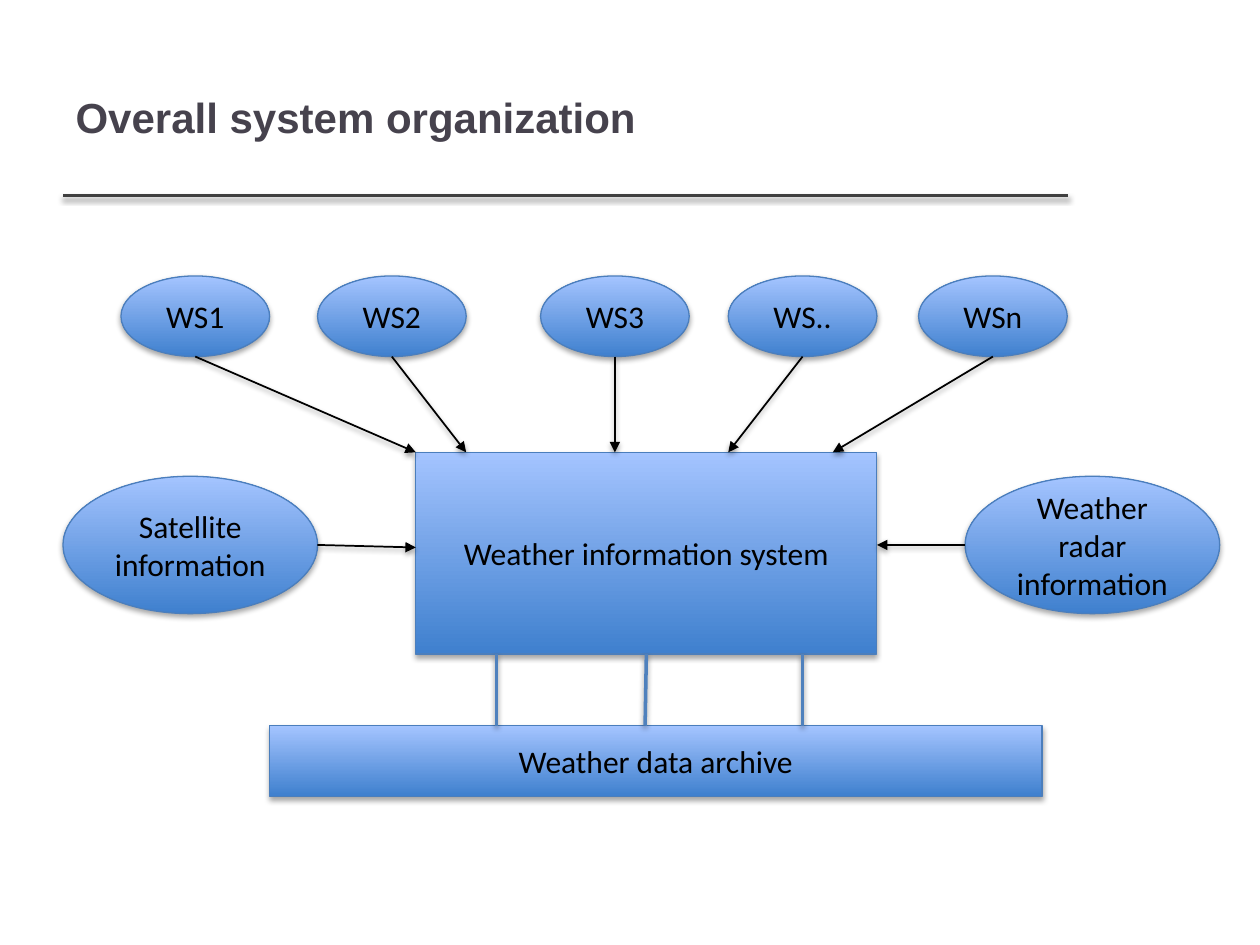
from lxml import etree
from pptx import Presentation
from pptx import util as u
from pptx.dml import color
from pptx.enum import shapes, text
from pptx.oxml import ns


def rgb(value):
    """Return a colour from a hex string."""
    return color.RGBColor.from_string(value)


def add_shadow(sp, distance, alpha):
    """Give a shape or connector a soft shadow that falls downwards."""
    effects = etree.SubElement(sp._element.spPr, ns.qn("a:effectLst"))
    shadow = etree.SubElement(effects, ns.qn("a:outerShdw"), blurRad="40000",
                              dist=str(distance), dir="5400000", rotWithShape="0")
    black = etree.SubElement(shadow, ns.qn("a:srgbClr"), val="000000")
    etree.SubElement(black, ns.qn("a:alpha"), val=str(alpha * 1000))


def write(tf, content, font="Calibri", size=18, fill="000000", bold=False,
          align=text.PP_ALIGN.CENTER):
    """Write one formatted paragraph, centred vertically, in a text frame."""
    tf.word_wrap = True
    tf.vertical_anchor = text.MSO_ANCHOR.MIDDLE
    p = tf.paragraphs[0]
    p.alignment = align
    r = p.add_run()
    r.text = content
    r.font.name, r.font.size, r.font.bold = font, u.Pt(size), bold
    r.font.color.rgb = rgb(fill)


def add_node(s, kind, box, label):
    """Add a labelled blue gradient shape in the given box."""
    sp = s.shapes.add_shape(kind, *map(u.Inches, box))
    sp.fill.gradient()
    sp.fill.gradient_angle = 90
    for stop, value in zip(sp.fill.gradient_stops, ("3F80CE", "A4C4FF")):
        stop.color.rgb = rgb(value)
    sp.line.color.rgb = rgb("4B7EBC")
    sp.line.width = u.Pt(0.75)
    add_shadow(sp, 23000, 35)
    write(sp.text_frame, label)
    return sp


def add_line(s, start, end, fill="000000", width=1, arrow=False):
    """Add a straight line between two points, with an optional arrowhead."""
    line = s.shapes.add_connector(shapes.MSO_CONNECTOR.STRAIGHT,
                                  *map(u.Inches, (*start, *end)))
    line.line.color.rgb = rgb(fill)
    line.line.width = u.Pt(width)
    if arrow:
        etree.SubElement(line.line._get_or_add_ln(), ns.qn("a:tailEnd"), type="triangle")
    add_shadow(line, 20000, 38)
    return line


def add_title(s, box, title):
    """Place the title and the rule along its lower edge."""
    left, top, width, height = box
    add_line(s, (left, top + height), (left + width, top + height), "404040", 2)
    sp = s.shapes.title
    sp.left, sp.top, sp.width, sp.height = map(u.Inches, box)
    write(sp.text_frame, title, font="Arial", size=24, fill="46424D", bold=True,
          align=text.PP_ALIGN.LEFT)


def add_stations(s, box, system_box):
    """Add the row of weather stations with arrows to the top of the system."""
    left, top, _, height = box
    system_left, system_top = system_box[:2]
    width = 1.18
    stations = [("WS1", 0, 0), ("WS2", 1.56, 0.4), ("WS3", 3.33, 1.58),
                ("WS..", 4.82, 2.48), ("WSn", 6.33, 3.31)]
    for label, offset, target in stations:
        x = left + offset
        add_node(s, shapes.MSO_SHAPE.OVAL, (x, top, width, height), label)
        add_line(s, (x + width / 2, top + height), (system_left + target, system_top),
                 arrow=True)


def add_sources(s, box, system_box):
    """Add the remote sources at both ends of the box, pointing at the system."""
    left, top, width, height = box
    system_left, _, system_width, _ = system_box
    oval_width, y = 2.02, top + height / 2
    right = left + width - oval_width
    for x, label in ((left, "Satellite information"), (right, "Weather radar information")):
        add_node(s, shapes.MSO_SHAPE.OVAL, (x, top, oval_width, height), label)
    add_line(s, (left + oval_width, y), (system_left, y + 0.02), arrow=True)
    add_line(s, (right, y), (system_left + system_width, y), arrow=True)


def add_archive(s, box, system, system_box):
    """Add the archive and the three links from the system down to it."""
    left, top, _, _ = box
    _, system_top, _, system_height = system_box
    add_node(s, shapes.MSO_SHAPE.RECTANGLE, box, "Weather data archive")
    bottom = system_top + system_height
    links = [add_line(s, (left + offset, bottom), (left + offset, top), "4F81BD", 2)
             for offset in (1.8, 2.98, 4.23)]
    links[1].begin_connect(system, 2)


def main():
    """Build the slide and save it."""
    prs = Presentation()
    prs.slide_width, prs.slide_height = u.Inches(10), u.Inches(7.5)
    s = prs.slides.add_slide(prs.slide_layouts[5])
    system_box = (3.3, 3.59, 3.66, 1.6)
    add_title(s, (0.5, 0.3, 7.98, 1.25), "Overall system organization")
    system = add_node(s, shapes.MSO_SHAPE.RECTANGLE, system_box,
                      "Weather information system")
    add_archive(s, (2.14, 5.76, 6.13, 0.56), system, system_box)
    add_stations(s, (0.96, 2.19, 7.51, 0.64), system_box)
    add_sources(s, (0.5, 3.78, 9.18, 1.09), system_box)
    prs.save("out.pptx")


if __name__ == "__main__":
    main()
